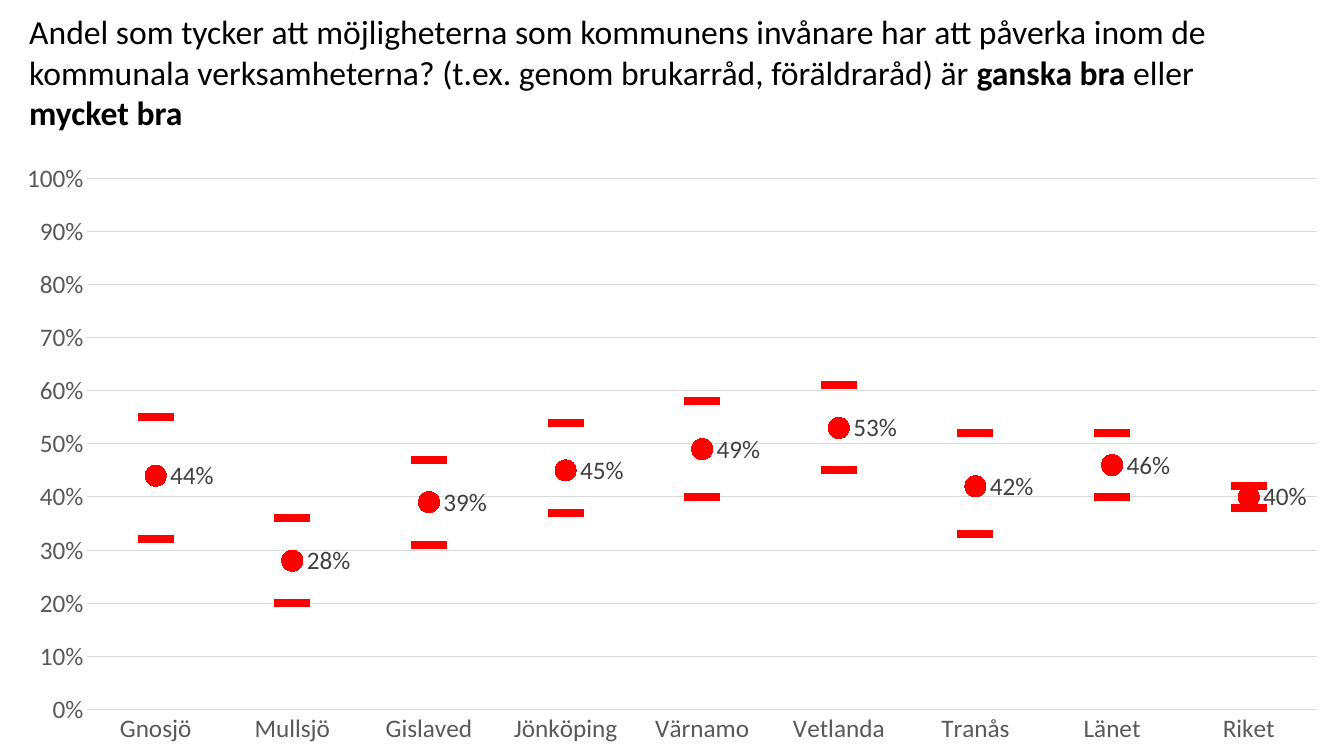
from lxml import etree
from pptx import Presentation, util as u
from pptx.chart.data import CategoryChartData
from pptx.dml.color import RGBColor
from pptx.enum import chart as charts, text
from pptx.oxml.ns import qn

FONT = "Calibri"
COLORS = {"title": "000000", "axis": "595959", "label": "404040",
          "grid": "D9D9D9", "marker": "FF0000"}
MUNICIPALITIES = ["Gnosjö", "Mullsjö", "Gislaved", "Jönköping", "Värnamo",
                  "Vetlanda", "Tranås", "Länet", "Riket"]
DASH = (charts.XL_MARKER_STYLE.DASH, 25)
CIRCLE = (charts.XL_MARKER_STYLE.CIRCLE, 15)
SERIES = [
    ("Series 1", [0.32, 0.2, 0.31, 0.37, 0.4, 0.45, 0.33, 0.4, 0.38], DASH),
    ("Series 2", [0.44, 0.28, 0.39, 0.45, 0.49, 0.53, 0.42, 0.46, 0.4], CIRCLE),
    ("Series 3", [0.55, 0.36, 0.47, 0.54, 0.58, 0.61, 0.52, 0.52, 0.42], DASH),
]
TITLE = [
    ("Andel som tycker att möjligheterna som kommunens invånare har att påverka "
     "inom de kommunala verksamheterna? (t.ex. genom brukarråd, föräldraråd) är ", False),
    ("ganska bra", True),
    (" eller ", False),
    ("mycket bra", True),
]


def color(name):
    return RGBColor.from_string(COLORS[name])


def format_font(font, size=18, fill="axis", bold=False):
    font.name = FONT
    font.size = u.Pt(size)
    font.bold = bold
    font.color.rgb = color(fill)


def format_line(line):
    line.color.rgb = color("grid")
    line.width = u.Pt(0.75)


def add_title(slide, left, top, width, height):
    shape = slide.shapes.add_textbox(*map(u.Inches, (left, top, width, height)))
    frame = shape.text_frame
    frame.word_wrap = True
    frame.vertical_anchor = text.MSO_ANCHOR.BOTTOM
    frame.margin_left = frame.margin_right = frame.margin_top = frame.margin_bottom = 0
    paragraph = frame.paragraphs[0]
    for words, bold in TITLE:
        run = paragraph.add_run()
        run.text = words
        format_font(run.font, 24, "title", bold)


def set_plot_area(chart, **fractions):
    plot_area = chart.plots[0]._element.getparent()
    for old in plot_area.findall(qn("c:layout")):
        plot_area.remove(old)
    layout = etree.Element(qn("c:layout"))
    manual = etree.SubElement(layout, qn("c:manualLayout"))
    settings = {"layoutTarget": "inner", "xMode": "edge", "yMode": "edge", **fractions}
    for tag, value in settings.items():
        etree.SubElement(manual, qn(f"c:{tag}")).set("val", str(value))
    plot_area.insert(0, layout)


def format_axes(chart):
    for axis in (chart.category_axis, chart.value_axis):
        axis.major_tick_mark = axis.minor_tick_mark = charts.XL_TICK_MARK.NONE
        format_font(axis.tick_labels.font)
    chart.category_axis.has_major_gridlines = False
    format_line(chart.category_axis.format.line)
    values = chart.value_axis
    values.minimum_scale, values.maximum_scale, values.major_unit = 0, 1, 0.1
    values.has_major_gridlines = True
    format_line(values.major_gridlines.format.line)
    values.format.line.fill.background()
    values.tick_labels.number_format = "0%"
    values.tick_labels.number_format_is_linked = False


def format_series(series, style, size):
    series.smooth = False
    series.format.line.fill.background()
    marker = series.marker
    marker.style, marker.size = style, size
    marker.format.fill.solid()
    marker.format.fill.fore_color.rgb = color("marker")
    marker.format.line.fill.background()


def add_labels(series):
    labels = series.data_labels
    labels.show_value = True
    labels.position = charts.XL_LABEL_POSITION.RIGHT
    labels.number_format = "0%"
    labels.number_format_is_linked = False
    format_font(labels.font, fill="label")


def add_interval_chart(slide, left, top, width, height):
    data = CategoryChartData(number_format="0%")
    data.categories = MUNICIPALITIES
    for name, values, _ in SERIES:
        data.add_series(name, values)
    chart = slide.shapes.add_chart(
        charts.XL_CHART_TYPE.LINE_MARKERS,
        *map(u.Inches, (left, top, width, height)), data).chart
    chart.has_title = False
    chart.has_legend = False
    format_font(chart.font, fill="title")
    plot = chart.plots[0]
    plot.vary_by_categories = False
    set_plot_area(chart, x=0.065, y=0.045, w=0.915, h=0.878)
    format_axes(chart)
    for series, (_, _, marker) in zip(plot.series, SERIES):
        format_series(series, *marker)
        if marker == CIRCLE:
            add_labels(series)


def main():
    presentation = Presentation()
    presentation.slide_width = u.Inches(13.33)
    presentation.slide_height = u.Inches(7.5)
    slide = presentation.slides.add_slide(presentation.slide_layouts[6])
    add_title(slide, 0.29, 0.43, 12.43, 0.88)
    add_interval_chart(slide, 0, 1.5, 13.33, 6)
    presentation.save("out.pptx")


if __name__ == "__main__":
    main()
